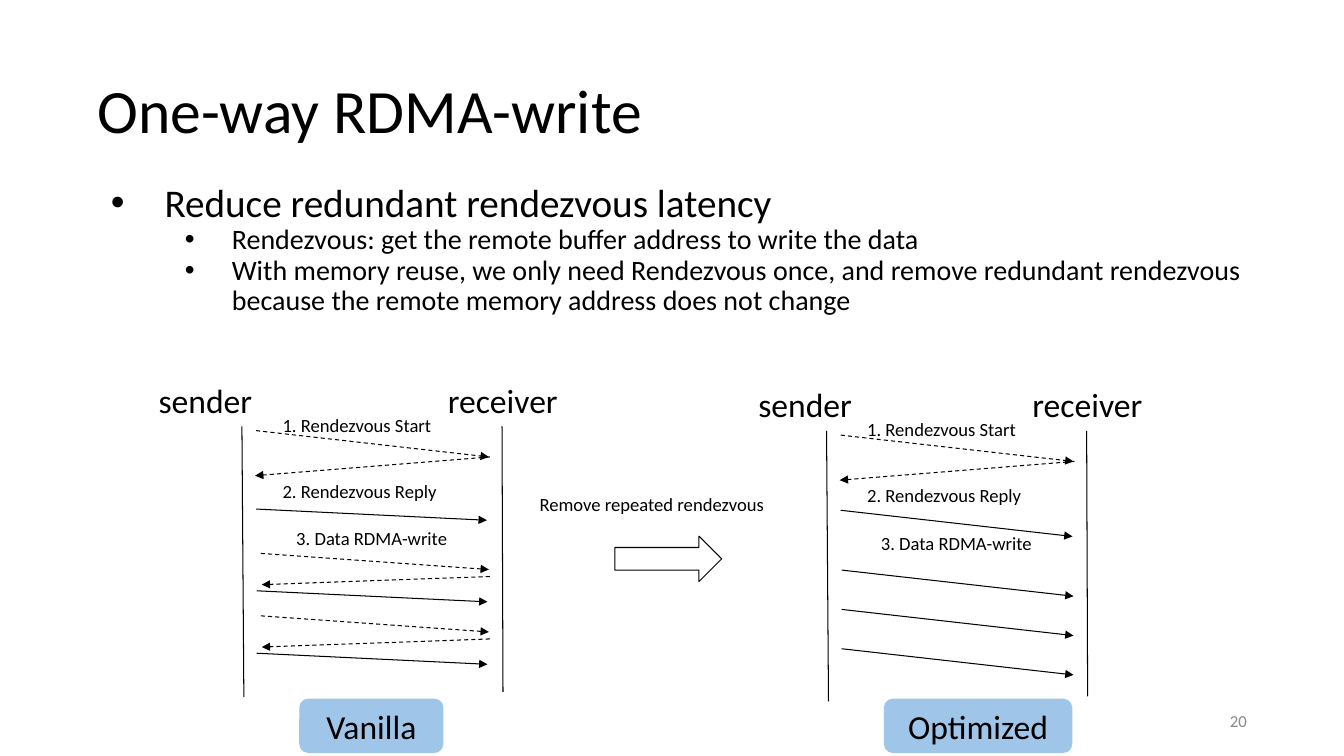
from dataclasses import dataclass

from lxml.etree import SubElement
from pptx import Presentation
from pptx.dml.color import RGBColor as Color
from pptx.enum.dml import MSO_LINE as Dash
from pptx.enum.shapes import MSO_CONNECTOR as Conn, MSO_SHAPE as Shape
from pptx.enum.text import MSO_ANCHOR as Anchor, MSO_AUTO_SIZE as Fit, PP_ALIGN as Align
from pptx.oxml.ns import qn
from pptx.util import Pt


@dataclass(frozen=True)
class Theme:
    font: str = "Calibri"
    ink: str = "000000"
    blue: str = "9FC5E8"
    gray: str = "888888"
    title: float = 44
    lead: float = 28
    item: float = 20
    head: float = 24
    label: float = 13.3
    number: float = 12
    line: float = 0.75
    pad: float = 9.6


class Board:
    def __init__(self, slide, theme):
        self.slide = slide
        self.theme = theme

    def place(self, shape, box):
        shape.left, shape.top, shape.width, shape.height = map(Pt, box)

    def frame(self, shape, pad, anchor):
        frame = shape.text_frame
        frame.word_wrap = True
        frame.auto_size = Fit.NONE
        frame.vertical_anchor = anchor
        frame.margin_left = frame.margin_right = Pt(pad)
        frame.margin_top = frame.margin_bottom = Pt(pad)
        return frame

    def run(self, para, text, size, color=None):
        run = para.add_run()
        run.text = text
        run.font.size = Pt(size)
        run.font.name = self.theme.font
        run.font.color.rgb = Color.from_string(color or self.theme.ink)

    def title(self, text, box):
        shape = self.slide.shapes.title
        self.place(shape, box)
        para = self.frame(shape, 3.6, Anchor.MIDDLE).paragraphs[0]
        para.alignment = Align.LEFT
        para.line_spacing = 0.9
        self.run(para, text, self.theme.title)

    def bullet(self, para, left, hang):
        props = para._p.get_or_add_pPr()
        props.set("marL", str(Pt(left)))
        props.set("indent", str(-Pt(hang)))
        tint = SubElement(props, qn("a:buClr"))
        SubElement(tint, qn("a:srgbClr"), val=self.theme.ink)
        SubElement(props, qn("a:buFont"), typeface="Arial")
        SubElement(props, qn("a:buChar"), char="•")

    def body(self, lead, items, box):
        shape = self.slide.placeholders[1]
        self.place(shape, box)
        frame = self.frame(shape, 3.6, Anchor.TOP)
        for i, text in enumerate([lead, *items]):
            para = frame.add_paragraph() if i else frame.paragraphs[0]
            para.level = 1 if i else 0
            para.line_spacing = 0.9
            para.space_before = Pt(0 if i else 10.7)
            self.bullet(para, *((96, 33.6) if i else (48, 38.4)))
            self.run(para, text, self.theme.item if i else self.theme.lead)

    def text(self, text, box, size):
        shape = self.slide.shapes.add_textbox(*map(Pt, box))
        frame = self.frame(shape, self.theme.pad, Anchor.TOP)
        self.run(frame.paragraphs[0], text, size)

    def number(self, text, box):
        shape = self.slide.shapes.add_textbox(*map(Pt, box))
        para = self.frame(shape, 2.9, Anchor.MIDDLE).paragraphs[0]
        para.alignment = Align.RIGHT
        self.run(para, text, self.theme.number, self.theme.gray)

    def line(self, start, end, dash=False, arrow=True):
        line = self.slide.shapes.add_connector(Conn.STRAIGHT, *map(Pt, (*start, *end)))
        line.line.color.rgb = Color.from_string(self.theme.ink)
        line.line.width = Pt(self.theme.line)
        if dash:
            line.line.dash_style = Dash.DASH
        if arrow:
            SubElement(line.line._get_or_add_ln(), qn("a:tailEnd"), type="triangle")
        SubElement(line._element.spPr, qn("a:effectLst"))

    def arrow(self, box):
        shape = self.slide.shapes.add_shape(Shape.RIGHT_ARROW, *map(Pt, box))
        shape.shadow.inherit = False
        shape.fill.background()
        shape.line.color.rgb = Color.from_string(self.theme.ink)
        shape.line.width = Pt(self.theme.line)

    def tag(self, text, box):
        shape = self.slide.shapes.add_shape(Shape.ROUNDED_RECTANGLE, *map(Pt, box))
        shape.shadow.inherit = False
        shape.fill.solid()
        shape.fill.fore_color.rgb = Color.from_string(self.theme.blue)
        shape.line.fill.background()
        para = self.frame(shape, self.theme.pad, Anchor.MIDDLE).paragraphs[0]
        para.alignment = Align.CENTER
        self.run(para, text, self.theme.head)

    def panel(self, x, y, name, width, sender, flows):
        """Draw one sequence chart; flows hold (start, end, dash) from its corner."""
        def at(point):
            return x + point[0], y + point[1]

        self.line(at((0, 0)), at((1.4, 193.2)), arrow=False)
        self.line(at((185.8, 0)), at((186.5, 189.6)), arrow=False)
        for start, end, dash in [*HELLO, *flows]:
            self.line(at(start), at(end), dash)
        for text, left in (("sender", sender), ("receiver", 137.5)):
            self.text(text, (*at((left, -43)), 108, 48), self.theme.head)
        for text, point in STEPS:
            self.text(text, (*at(point), 147.6, 32.4), self.theme.label)
        self.tag(name, (x + 41, 499, width, 38.9))


HELLO = [
    ((10.1, 3), (176.4, 21.8), True),
    ((177.1, 21.8), (9.4, 35.2), True),
]
STEPS = [
    ("1. Rendezvous Start", (19.4, -18.9)),
    ("2. Rendezvous Reply", (19.4, 28.3)),
    ("3. Data RDMA-write", (29.2, 62.5)),
]


def repeat(flows, count, pitch):
    return [
        ((a, b + i * pitch), (c, d + i * pitch), dash)
        for i in range(count)
        for (a, b), (c, d), dash in flows
    ]


def main():
    deck = Presentation()
    deck.slide_width, deck.slide_height = Pt(960), Pt(540)
    board = Board(deck.slides.add_slide(deck.slide_layouts[1]), Theme())

    board.title("One-way RDMA-write", (66, 28.8, 828, 104.4))
    board.body(
        "Reduce redundant rendezvous latency",
        [
            "Rendezvous: get the remote buffer address to write the data",
            "With memory reuse, we only need Rendezvous once, and remove redundant "
            "rendezvous because the remote memory address does not change",
        ],
        (66, 127.4, 828, 146.9),
    )

    cycle = [
        ((13.5, 90.7), (176.4, 102.2), True),
        ((177.1, 107.2), (14.2, 113), True),
        ((10.5, 117.4), (175.4, 125.3), False),
    ]
    vanilla = [((10.1, 59), (175, 67), False), *repeat(cycle, 2, 44.6)]
    write = [((10.8, 99.4), (176.4, 118.1), False)]
    fast = [((10.1, 56.7), (175.7, 75.4), False), *repeat(write, 3, 28.1)]

    board.panel(172.8, 304.6, "Vanilla", 103, -69.1, vanilla)
    board.panel(590.4, 307.8, "Optimized", 134.6, -58.3, fast)
    board.text("Remove repeated rendezvous", (375.8, 342.7, 198.7, 32.4), board.theme.label)
    board.arrow((439.2, 383, 76.3, 32.4))
    board.number("20", (871.9, 504, 21.6, 21.6))
    deck.save("out.pptx")


if __name__ == "__main__":
    main()
